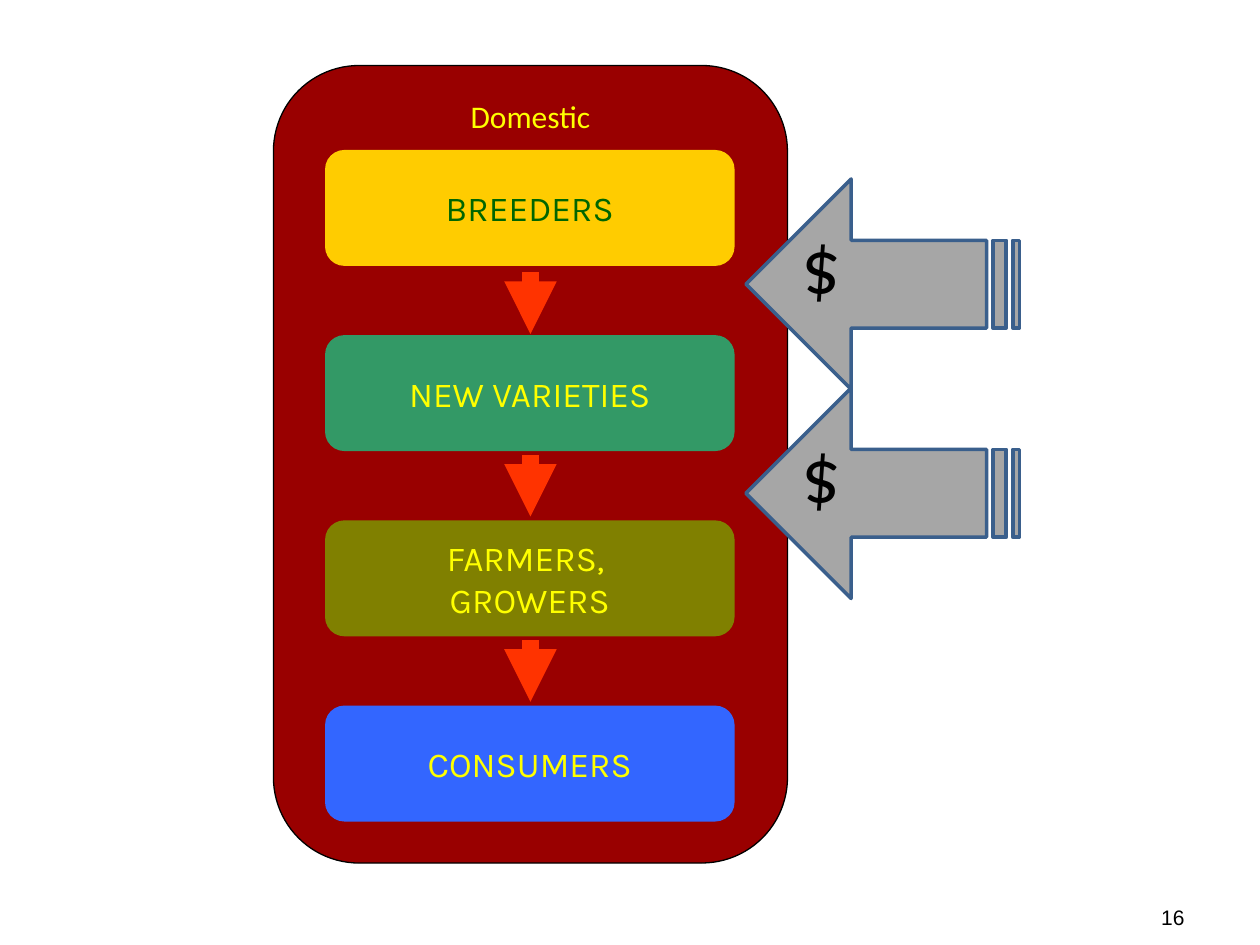
import pptx
import pptx.util
import pptx.dml.color
import pptx.enum.shapes
import pptx.enum.text
import pptx.oxml
import pptx.oxml.ns

Inches = pptx.util.Inches
Pt = pptx.util.Pt
SHAPES = pptx.enum.shapes.MSO_SHAPE
ALIGN = pptx.enum.text.PP_ALIGN
ANCHOR = pptx.enum.text.MSO_ANCHOR


def color(hex_string):
    return pptx.dml.color.RGBColor.from_string(hex_string)


def write(shape, text, font, size, hex_string, align, anchor=ANCHOR.MIDDLE, wrap=False):
    frame = shape.text_frame
    for name, value in {"word_wrap": wrap, "vertical_anchor": anchor}.items():
        setattr(frame, name, value)
    paragraph = frame.paragraphs[0]
    paragraph.text = text
    paragraph.alignment = align
    for run in paragraph.runs:
        for name, value in {"name": font, "size": Pt(size)}.items():
            setattr(run.font, name, value)
        run.font.color.rgb = color(hex_string)


presentation = pptx.Presentation()
presentation.slide_width = Inches(10)
presentation.slide_height = Inches(7.5)
slide = presentation.slides.add_slide(presentation.slide_layouts[6])
shapes = slide.shapes

# Slide number
number = shapes.add_textbox(Inches(7.17), Inches(7.08), Inches(2.33), Inches(0.4))
write(number, "16", "Arial", 12, "000000", ALIGN.RIGHT, wrap=True)

# Domestic panel
panel = shapes.add_shape(SHAPES.ROUNDED_RECTANGLE, Inches(2.17), Inches(0.52),
                         Inches(4.08), Inches(6.33))
panel.shadow.inherit = False
panel.fill.solid()
panel.fill.fore_color.rgb = color("990000")
panel.line.color.rgb = color("000000")
panel.line.width = Pt(0.75)
write(panel, "Domestic", "Calibri", 18, "FFFF00", ALIGN.CENTER, ANCHOR.TOP)

# Stages of the chain, evenly spaced from top to bottom
stages = [
    ("BREEDERS", "FFCC00", "006600"),
    ("NEW VARIETIES", "339966", "FFFF00"),
    ("FARMERS, \vGROWERS", "808000", "FFFF00"),
    ("CONSUMERS", "3366FF", "FFFF00"),
]
for index, (text, fill, font_color) in enumerate(stages):
    stage = shapes.add_shape(SHAPES.ROUNDED_RECTANGLE, Inches(2.58),
                             Inches(1.19 + 1.47 * index), Inches(3.25), Inches(0.92))
    stage.shadow.inherit = False
    stage.fill.solid()
    stage.fill.fore_color.rgb = color(fill)
    stage.line.fill.background()
    write(stage, text, "Karla", 20, font_color, ALIGN.CENTER)

# Arrows between the stages
for top in (2.16, 3.61, 5.08):
    arrow = shapes.add_connector(pptx.enum.shapes.MSO_CONNECTOR.STRAIGHT, Inches(4.21),
                                 Inches(top), Inches(4.21), Inches(top + 0.49))
    arrow.line.color.rgb = color("FF3300")
    arrow.line.width = Pt(10)
    head = pptx.oxml.parse_xml(
        f'<a:tailEnd {pptx.oxml.ns.nsdecls("a")} type="triangle"/>')
    arrow.line._get_or_add_ln().append(head)
    effects = pptx.oxml.parse_xml(f'<a:effectLst {pptx.oxml.ns.nsdecls("a")}/>')
    arrow._element.spPr.append(effects)

# Money arrows pointing into the chain
for top in (3.08, 1.42):
    money = shapes.add_shape(SHAPES.STRIPED_RIGHT_ARROW, Inches(5.92), Inches(top),
                             Inches(2.17), Inches(1.67))
    money.rotation = 180
    money.adjustments[0] = 0.417
    money.adjustments[1] = 0.5
    money.shadow.inherit = False
    money.fill.solid()
    money.fill.fore_color.rgb = color("A6A6A6")
    money.line.color.rgb = color("3A5F8C")
    money.line.width = Pt(2)
    write(money, "$", "Calibri", 44, "000000", ALIGN.RIGHT, wrap=True)

presentation.save("out.pptx")
